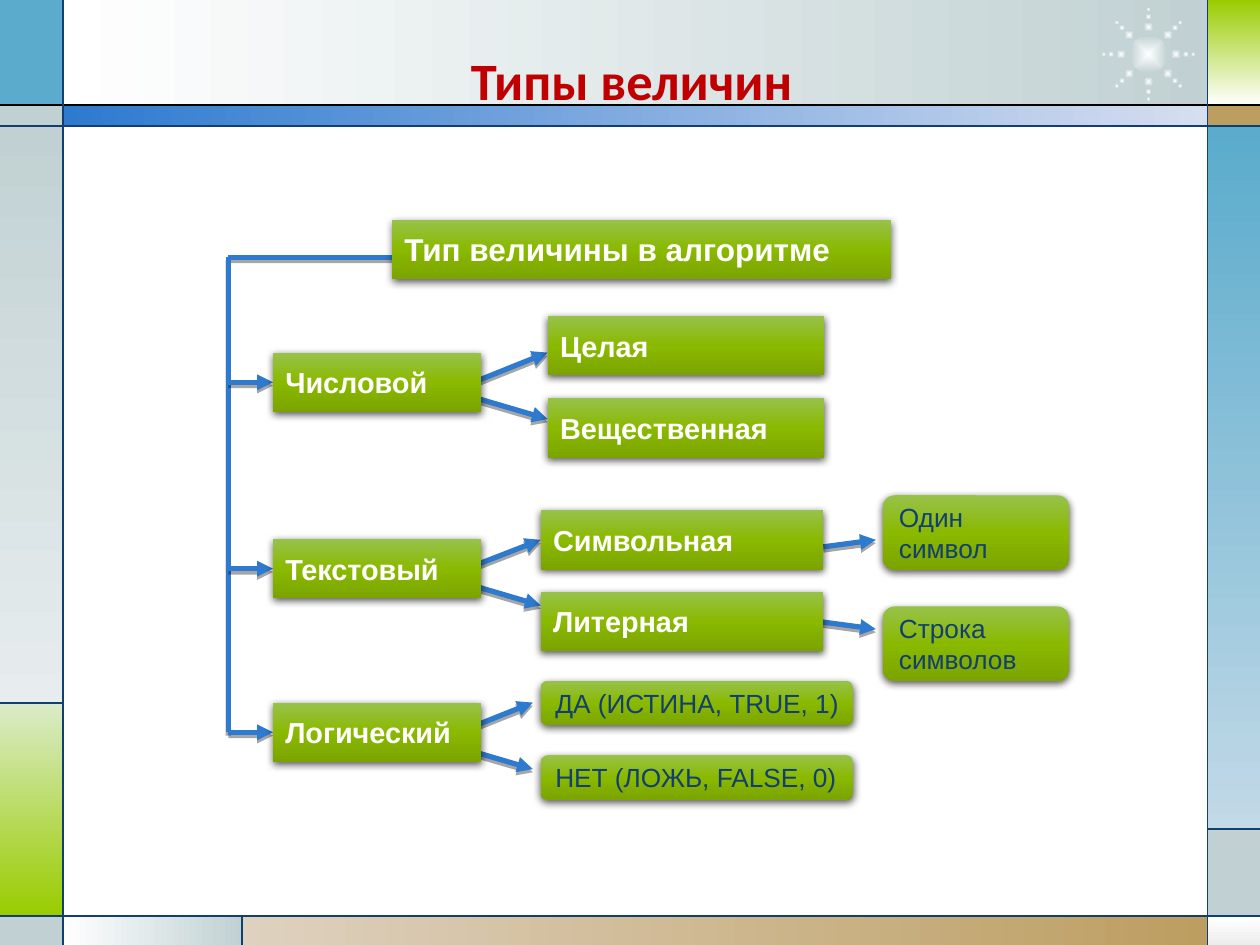
"""Build a slide with a tree of value types in algorithms."""
import math
from pptx import Presentation, oxml, util as u
from pptx.dml.color import RGBColor
from pptx.enum import shapes as sh, text as tx

Pt = u.Pt
WHITE = RGBColor(0xFF, 0xFF, 0xFF)
BLACK = RGBColor(0x00, 0x00, 0x00)
NAVY = RGBColor(0x11, 0x3F, 0x71)
BLUE = RGBColor(0x2D, 0x7A, 0xCF)
PALE = RGBColor(0xD7, 0xDE, 0xF0)
RED = RGBColor(0xC0, 0x00, 0x00)
GREY = RGBColor(0xC1, 0xD1, 0xD3)
MIST = RGBColor(0xE7, 0xED, 0xEE)
ASH = RGBColor(0xED, 0xED, 0xED)
SKY = RGBColor(0x5A, 0xAB, 0xCC)
ICE = RGBColor(0xC2, 0xD9, 0xE7)
LIME = RGBColor(0x99, 0xCC, 0x00)
MINT = RGBColor(0xDB, 0xEB, 0xC9)
SAND = RGBColor(0xDE, 0xD1, 0xBF)
TAN = RGBColor(0xBD, 0x9E, 0x61)
LEAF = [RGBColor(0x97, 0xC2, 0x4B), RGBColor(0x8A, 0xB9, 0x00), RGBColor(0x7B, 0xA4, 0x00)]

W, H = 720, 540
LEFT, RIGHT, SPLIT = 36, 690, 138.24
TOP, BAND, FOOT = 60, 72, 523.5
GREEN, STEEL = 401.76, 473.76

# left, top, right, bottom, colours, angle
TILES = [
    (LEFT, 0, RIGHT, TOP, [WHITE, GREY], 0),
    (0, 0, LEFT, TOP, [SKY], 0),
    (0, TOP, LEFT, BAND, [GREY], 0),
    (0, BAND, LEFT, GREEN, [GREY, MIST], 90),
    (0, GREEN, LEFT, FOOT, [MINT, LIME], 90),
    (0, FOOT, LEFT, H, [GREY], 0),
    (LEFT, FOOT, SPLIT, H, [WHITE, GREY], 0),
    (SPLIT, FOOT, RIGHT, H, [SAND, TAN], 0),
    (RIGHT, FOOT, W, H, [WHITE, ASH], 90),
    (RIGHT, STEEL, W, FOOT, [GREY], 0),
    (RIGHT, BAND, W, STEEL, [SKY, ICE], 90),
    (RIGHT, TOP, W, BAND, [TAN], 0),
    (RIGHT, 0, W, TOP, [LIME, WHITE], 90),
    (LEFT, TOP, RIGHT, BAND, [BLUE, PALE], 0),
]
RULES = [
    (0, TOP, W, TOP, BLACK), (0, BAND, W, BAND, NAVY), (0, FOOT, W, FOOT, NAVY),
    (LEFT, 0, LEFT, H, NAVY), (RIGHT, 0, RIGHT, H, NAVY), (0, GREEN, LEFT, GREEN, NAVY),
    (SPLIT, FOOT, SPLIT, H, NAVY), (RIGHT, STEEL, W, STEEL, NAVY),
]
SUN = (656.3, 31)
DOTS = [(15.6, 5.4), (21.4, 3.5), (25.6, 2.5)]

# width, height, rounded, text size, text colour
KINDS = {
    "root": (285, 34, False, 18, WHITE),
    "type": (119, 34, False, 16.5, WHITE),
    "num": (158, 34, False, 16.5, WHITE),
    "str": (161.5, 34, False, 16.5, WHITE),
    "note": (106.5, 42.5, True, 15, NAVY),
    "bool": (178.5, 25.5, True, 15, NAVY),
}
NODES = [
    ("Тип величины в алгоритме", "root", 224, 125.5),
    ("Числовой", "type", 156, 201.5),
    ("Текстовый", "type", 156, 308),
    ("Логический", "type", 156, 401.5),
    ("Целая", "num", 313, 180.5),
    ("Вещественная", "num", 313, 227.5),
    ("Символьная", "str", 309, 291.5),
    ("Литерная", "str", 309, 338),
    ("Один\nсимвол", "note", 504.5, 283),
    ("Строка\nсимволов", "note", 504.5, 346.5),
    ("ДА (ИСТИНА, TRUE, 1)", "bool", 309, 389),
    ("НЕТ (ЛОЖЬ, FALSE, 0)", "bool", 309, 431.5),
]
TRUNK, CROWN = 130.5, 147
FANS = [(270.5, 218.5), (266.5, 325), (262, 418.5)]
LINKS = [(470.5, 312.5, 500.5, 308.5), (466.5, 355, 500.5, 359.5)]

deck = Presentation()
deck.slide_width, deck.slide_height = Pt(W), Pt(H)
slide = deck.slides.add_slide(deck.slide_layouts[6])


def node(body):
    """Make a drawing element from its markup."""
    name, rest = body.split(" ", 1)
    return oxml.parse_xml(f'<a:{name} xmlns:a="http://schemas.openxmlformats.org/drawingml/2006/main" {rest}')


def shade(item, blur, dist, alpha):
    """Put a soft black shadow below an item."""
    item._element.spPr.append(node(
        f'effectLst ><a:outerShdw blurRad="{Pt(blur)}" dist="{Pt(dist)}" dir="5400000" rotWithShape="0">'
        f'<a:srgbClr val="{BLACK}"><a:alpha val="{alpha}000"/></a:srgbClr></a:outerShdw></a:effectLst>'))


def paint(item, hues, angle):
    """Fill with one colour, or a blend; no angle blends from the centre."""
    item.line.fill.background()
    if len(hues) == 1:
        item.fill.solid()
        item.fill.fore_color.rgb = hues[0]
        return
    step = 100000 // (len(hues) - 1)
    stops = "".join(f'<a:gs pos="{i * step}"><a:srgbClr val="{hue}"/></a:gs>' for i, hue in enumerate(hues))
    if angle is None:
        way = '<a:path path="shape"><a:fillToRect l="50000" t="50000" r="50000" b="50000"/></a:path>'
    else:
        way = f'<a:lin ang="{angle * 60000}" scaled="0"/>'
    props = item._element.spPr
    props.insert(2, node(f'gradFill rotWithShape="1"><a:gsLst>{stops}</a:gsLst>{way}</a:gradFill>'))


def block(kind, x, y, w, h, hues, angle):
    """Add a filled shape without outline."""
    item = slide.shapes.add_shape(kind, Pt(x), Pt(y), Pt(w), Pt(h))
    paint(item, hues, angle)
    return item


def line(x, y, right, low, hue, size):
    """Add a straight line."""
    item = slide.shapes.add_connector(sh.MSO_CONNECTOR.STRAIGHT, Pt(x), Pt(y), Pt(right), Pt(low))
    item.line.color.rgb = hue
    item.line.width = Pt(size)
    return item


def stem(x, y, right, low, tip=True):
    """Add a thick line of the tree, with an arrow tip if asked."""
    item = line(x, y, right, low, BLUE, 3)
    if tip:
        item.line._get_or_add_ln().append(node('tailEnd type="triangle"/>'))
    shade(item, 0, 1.8, 35)
    return item


def style(frame, size, face, hue, bold):
    """Format all runs of a text frame."""
    frame.vertical_anchor = tx.MSO_ANCHOR.MIDDLE
    for para in frame.paragraphs:
        para.alignment = tx.PP_ALIGN.LEFT
        for run in para.runs:
            font = run.font
            font.size, font.name, font.bold = Pt(size), face, bold
            font.color.rgb = hue


def box(label, kind, x, y):
    """Add a labelled box of the tree."""
    w, h, soft, size, hue = KINDS[kind]
    form = sh.MSO_SHAPE.ROUNDED_RECTANGLE if soft else sh.MSO_SHAPE.RECTANGLE
    item = block(form, x, y, w, h, LEAF, 90)
    shade(item, 4.5, 1.5, 63)
    frame = item.text_frame
    frame.text = label
    frame.word_wrap = False
    style(frame, size, "Arial", hue, not soft)
    return item


def disc(x, y, size):
    """Add a round dot around a centre."""
    item = block(sh.MSO_SHAPE.OVAL, x - size / 2, y - size / 2, size, size, [WHITE, GREY], None)
    item.shadow.inherit = False


for x, y, right, low, hues, angle in TILES:
    tile = block(sh.MSO_SHAPE.RECTANGLE, x, y, right - x, low - y, hues, angle)
    tile.shadow.inherit = False

disc(*SUN, 21.6)
for ray in range(8):
    turn = math.radians(45 * ray)
    for far, size in DOTS:
        disc(SUN[0] + far * math.cos(turn), SUN[1] + far * math.sin(turn), size)

for *ends, hue in RULES:
    rule = line(*ends, hue, 0.75)
    rule._element.spPr.append(node("effectLst />"))

stem(224, CROWN, TRUNK, CROWN, False)
stem(TRUNK, CROWN, TRUNK, FANS[-1][1], False)
twigs = [stem(TRUNK, y, 156, y) for x, y in FANS]
ups = [stem(x, y, x + 42.5, y - 17) for x, y in FANS]
for x, y in FANS:
    stem(x, y + 8.5, x + 42.5, y + 21)
for ends in LINKS:
    stem(*ends)

boxes = [box(*spec) for spec in NODES]
for twig, goal in zip(twigs + [ups[1]], boxes[1:4] + [boxes[6]]):
    twig.end_connect(goal, 1)

title = slide.shapes.add_textbox(Pt(262), Pt(34), Pt(472), Pt(29.5)).text_frame
title.word_wrap = True
title.text = "Типы величин"
title.paragraphs[0].line_spacing = 0.8
style(title, 30, "Calibri", RED, True)

deck.save("out.pptx")
